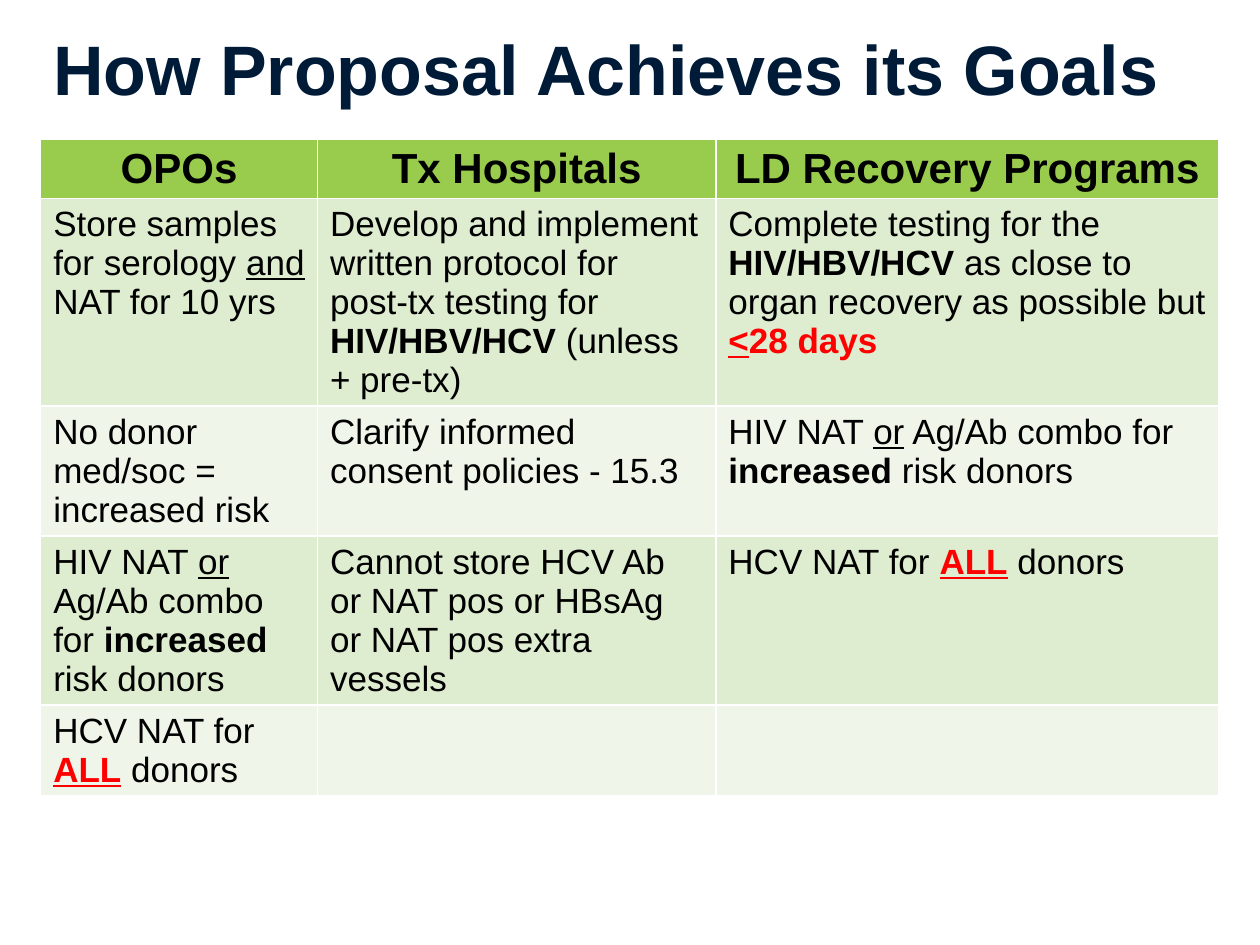
from pptx import Presentation
from pptx.dml.color import RGBColor
from pptx.enum import text as t
from pptx.util import Cm, Pt

HEADS = ["OPOs", "Tx Hospitals", "LD Recovery Programs"]
COMBO = [("HIV NAT ", ""), ("or", "u"), (" Ag/Ab combo for ", ""),
         ("increased", "b"), (" risk donors", "")]
ALL = [("HCV NAT for ", ""), ("ALL", "bur"), (" donors", "")]
ROWS = [
    [[("Store samples for serology ", ""), ("and", "u"), (" NAT for 10 yrs", "")],
     [("Develop and implement written protocol for post-tx testing for ", ""),
      ("HIV/HBV/HCV ", "b"), ("(unless + pre-tx)", "")],
     [("Complete testing for the ", ""), ("HIV/HBV/HCV ", "b"),
      ("as close to organ recovery as possible but ", ""),
      ("<", "bur"), ("28 days", "br")]],
    [[("No donor med/soc = increased risk", "")],
     [("Clarify informed consent policies - 15.3", "")],
     COMBO],
    [COMBO,
     [("Cannot store HCV Ab or NAT pos or HBsAg or NAT pos extra vessels", "")],
     ALL],
    [ALL, [], []],
]
WIDTHS = [5.58, 8.03, 10.14]
HEIGHTS = [1.19, 3.73, 2.62, 3.4, 1.83]
BANDS = ["DEECD0", "EFF6E9"]


def tint(item, code):
    item.rgb = RGBColor.from_string(code)


def style(run, size, code, bold=False, under=False):
    font = run.font
    font.name, font.size = "Arial", Pt(size)
    font.bold, font.underline = bold, under
    tint(font.color, code)


def shade(cell, code):
    cell.fill.solid()
    tint(cell.fill.fore_color, code)


def add_title(slide, x, y, w, h):
    title = slide.shapes.title
    title.left, title.top, title.width, title.height = Cm(x), Cm(y), Cm(w), Cm(h)
    frame = title.text_frame
    frame.text = "How Proposal Achieves its Goals"
    frame.vertical_anchor = t.MSO_ANCHOR.MIDDLE
    para = frame.paragraphs[0]
    para.alignment = t.PP_ALIGN.LEFT
    style(para.runs[0], 40, "001B37", True)


def add_goals(slide, x, y):
    table = slide.shapes.add_table(
        len(HEIGHTS), len(WIDTHS), Cm(x), Cm(y),
        Cm(sum(WIDTHS)), Cm(sum(HEIGHTS))).table
    for col, width in zip(table.columns, WIDTHS):
        col.width = Cm(width)
    for row, height in zip(table.rows, HEIGHTS):
        row.height = Cm(height)
    for cell, head in zip(table.rows[0].cells, HEADS):
        shade(cell, "99CC4C")
        para = cell.text_frame.paragraphs[0]
        para.text = head
        para.alignment = t.PP_ALIGN.CENTER
        style(para.runs[0], 24, "000000", True)
    for i, parts in enumerate(ROWS):
        for cell, runs in zip(table.rows[i + 1].cells, parts):
            shade(cell, BANDS[i % 2])
            para = cell.text_frame.paragraphs[0]
            for words, marks in runs:
                run = para.add_run()
                run.text = words
                style(run, 20, "FF0000" if "r" in marks else "000000",
                      "b" in marks, "u" in marks)


def main():
    deck = Presentation()
    deck.slide_width, deck.slide_height = Cm(25.4), Cm(19.05)
    slide = deck.slides.add_slide(deck.slide_layouts[5])
    add_goals(slide, 0.82, 2.8)
    add_title(slide, 0.82, 0.43, 24.28, 1.85)
    deck.save("out.pptx")


if __name__ == "__main__":
    main()
